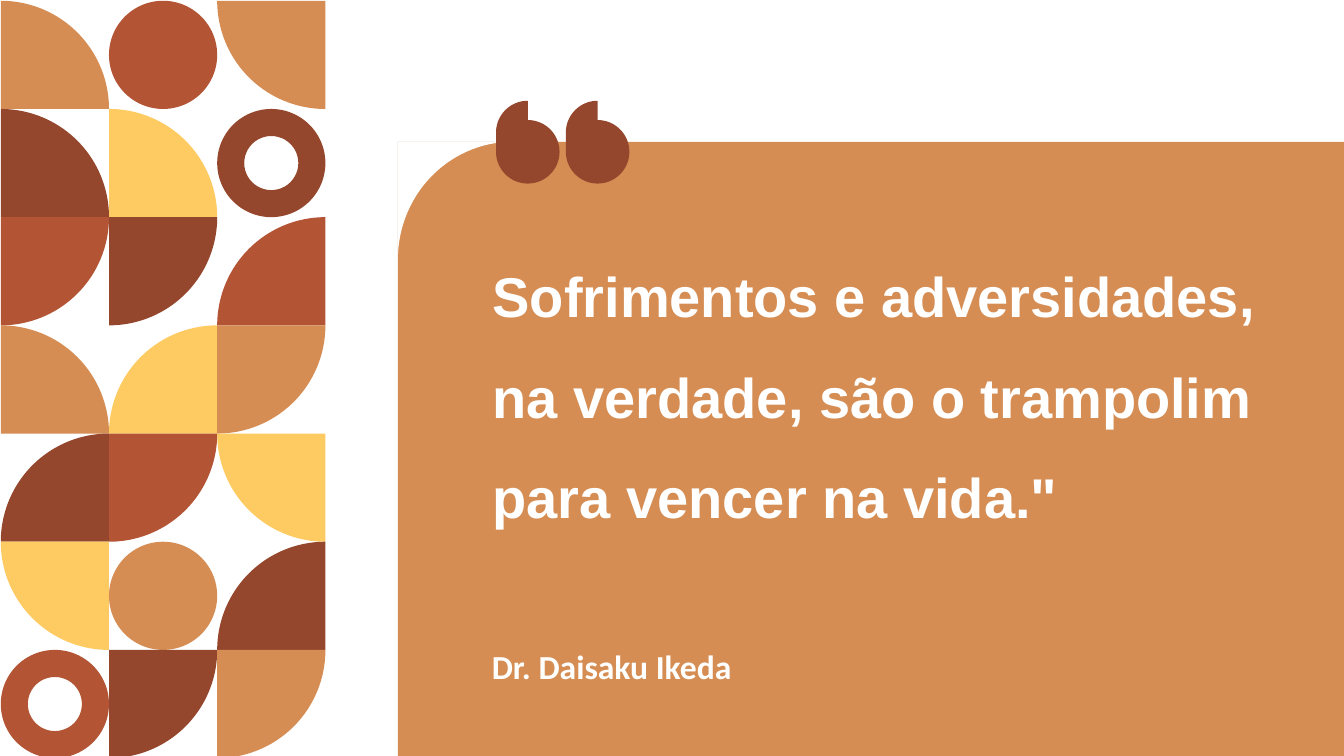
from math import cos, radians, sin

from pptx import Presentation
from pptx.dml.color import RGBColor
from pptx.enum.shapes import MSO_SHAPE
from pptx.enum.text import MSO_ANCHOR, MSO_AUTO_SIZE
from pptx.util import Cm, Pt

THEME = {
    "tan": "D58D53", "rust": "B35435", "brown": "95472D",
    "yellow": "FDCB61", "white": "FFFFFF",
    "quote": {"size": Pt(60), "name": "Arial", "bold": True},
    "author": {"size": Pt(36), "name": "Calibri", "bold": True},
}

# Content: text, style, line spacing, box (left, top, width, height in cm)
TEXTS = [
    ("Sofrimentos e adversidades, na verdade, são o trampolim para vencer na vida.\"",
     "quote", 1.5, (18.62, 8.61, 29.87, 11.53)),
    ("Dr. Daisaku Ikeda", "author", 1.4, (18.59, 23.8, 10.69, 2.16)),
]

# Mosaic rows; a quarter disc is named by the corner that holds its centre
MOSAIC = [
    [("bottom left", "tan"), ("disc", "rust"), ("top right", "tan")],
    [("bottom left", "brown"), ("bottom left", "yellow"), ("ring", "brown")],
    [("top left", "rust"), ("top left", "brown"), ("bottom right", "rust")],
    [("bottom left", "tan"), ("bottom right", "yellow"), ("top left", "tan")],
    [("bottom right", "brown"), ("top left", "rust"), ("top right", "yellow")],
    [("top right", "yellow"), ("disc", "tan"), ("bottom right", "brown")],
    [("ring", "rust"), ("top left", "brown"), ("top left", "tan")],
]
TILES = {
    "disc": (MSO_SHAPE.OVAL, 0),
    "ring": (MSO_SHAPE.DONUT, 0),
    "bottom right": (MSO_SHAPE.PIE_WEDGE, 0),
    "bottom left": (MSO_SHAPE.PIE_WEDGE, 90),
    "top left": (MSO_SHAPE.PIE_WEDGE, 180),
    "top right": (MSO_SHAPE.PIE_WEDGE, 270),
}
TILE, MARGIN = 4.09, 0.03
PANEL = (15.04, 5.36, 35.76, 23.22)
CORNER = (4.34, 4.45)
MARK_LEFTS, MARK_TOP, MARK_RADIUS, MARK_DROP = (18.75, 21.39), 3.81, 1.2, 1.93


def paint(shape, color):
    shape.shadow.inherit = False
    shape.fill.solid()
    shape.fill.fore_color.rgb = RGBColor.from_string(THEME[color])
    shape.line.fill.background()


def add_preset(shapes, kind, box, color):
    shape = shapes.add_shape(kind, *map(Cm, box))
    paint(shape, color)
    return shape


def arc(center_x, center_y, radius_x, radius_y, start, end, step=3):
    """Points in cm along an elliptical arc, angles clockwise from the right."""
    count = abs(end - start) // step
    angles = [radians(start + (end - start) * i / count) for i in range(count + 1)]
    return [(center_x + radius_x * cos(a), center_y + radius_y * sin(a)) for a in angles]


def add_outline(shapes, points, color):
    points = [(Cm(x), Cm(y)) for x, y in points]
    builder = shapes.build_freeform(*points[0])
    builder.add_line_segments(points[1:], close=True)
    paint(builder.convert_to_shape(), color)


def add_text(shapes, text, style, spacing, box):
    frame = shapes.add_textbox(*map(Cm, box)).text_frame
    settings = {
        "word_wrap": True, "auto_size": MSO_AUTO_SIZE.SHAPE_TO_FIT_TEXT,
        "vertical_anchor": MSO_ANCHOR.TOP, "margin_left": 0, "margin_right": 0,
        "margin_top": 0, "margin_bottom": 0,
    }
    for name, value in settings.items():
        setattr(frame, name, value)
    paragraph = frame.paragraphs[0]
    paragraph.line_spacing = spacing
    run = paragraph.add_run()
    run.text = text
    for name, value in THEME[style].items():
        setattr(run.font, name, value)
    run.font.color.rgb = RGBColor.from_string(THEME["white"])


def main():
    presentation = Presentation()
    presentation.slide_width, presentation.slide_height = Cm(50.8), Cm(28.58)
    slide = presentation.slides.add_slide(presentation.slide_layouts[6])
    shapes = slide.shapes

    # Panel with its top left corner rounded off
    add_preset(shapes, MSO_SHAPE.RECTANGLE, PANEL, "tan")
    left, top = PANEL[:2]
    width, height = CORNER
    curve = arc(left + width, top + height, width, height, 180, 270)
    add_outline(shapes, [(left, top)] + curve, "white")

    # Opening quotation marks: a quarter arc on top of a round body
    marks = shapes.add_group_shape()
    for mark_left in MARK_LEFTS:
        center, radius = mark_left + MARK_RADIUS, MARK_RADIUS
        hook = arc(center, MARK_TOP + radius, radius, radius, 270, 180)
        body = arc(center, MARK_TOP + MARK_DROP, radius, radius, 180, -90)
        add_outline(marks.shapes, hook + body, "brown")

    # Quote and author
    for text in TEXTS:
        add_text(shapes, *text)

    # Mosaic
    for row, tiles in enumerate(MOSAIC):
        for column, (name, color) in enumerate(tiles):
            kind, rotation = TILES[name]
            box = (MARGIN + column * TILE, MARGIN + row * TILE, TILE, TILE)
            tile = add_preset(shapes, kind, box, color)
            tile.rotation = rotation

    presentation.save("out.pptx")


if __name__ == "__main__":
    main()
